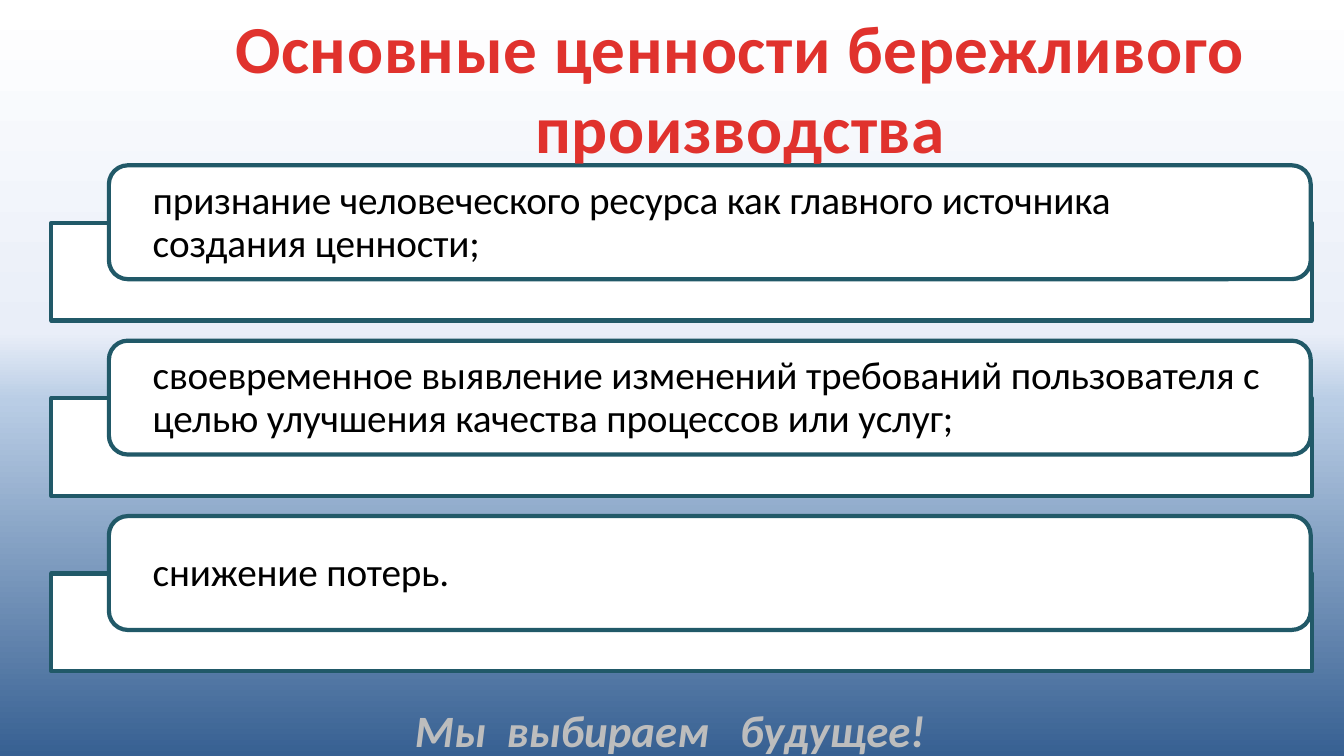
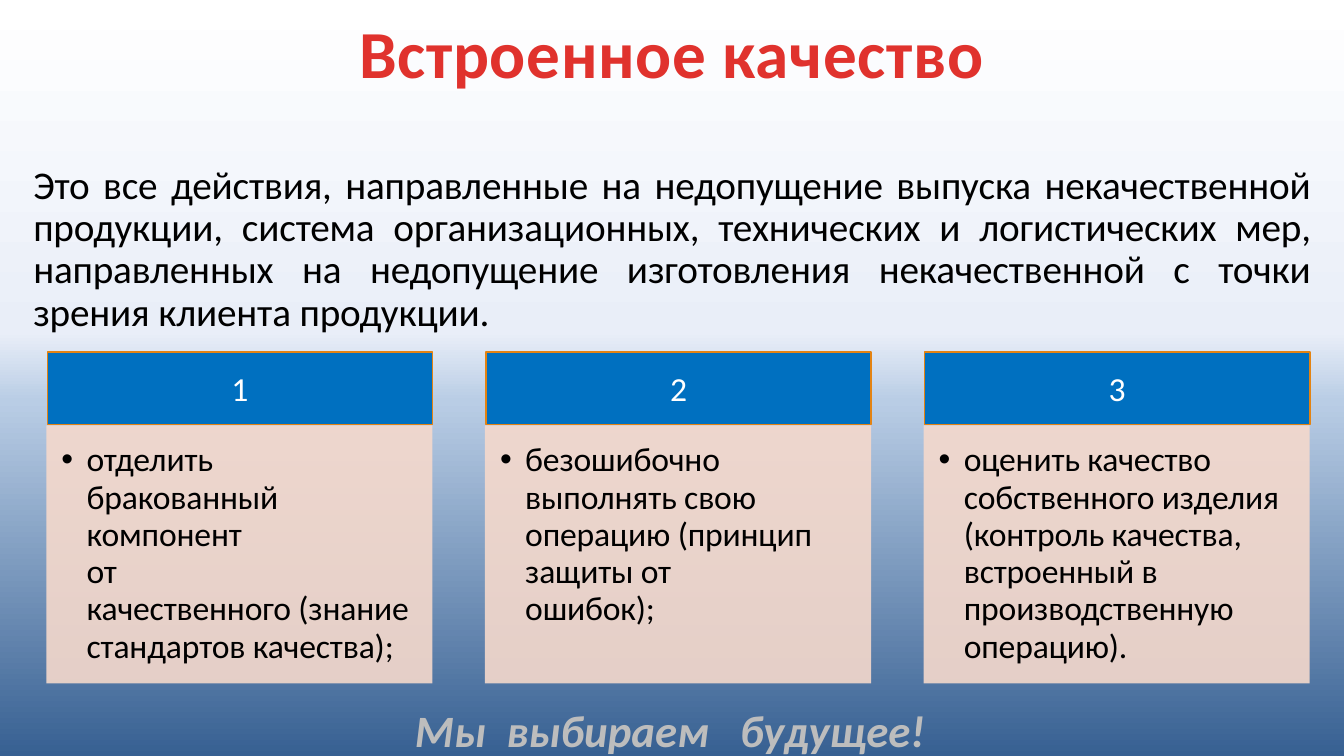
from lxml import etree
from pptx import Presentation
from pptx.dml.color import RGBColor
from pptx.enum.shapes import MSO_SHAPE
from pptx.enum.text import MSO_ANCHOR, PP_ALIGN
from pptx.oxml.ns import qn
from pptx.util import Inches, Pt

RECT, ROUNDED = MSO_SHAPE.RECTANGLE, MSO_SHAPE.ROUNDED_RECTANGLE
TOP, MIDDLE = MSO_ANCHOR.TOP, MSO_ANCHOR.MIDDLE
LEFT, CENTER, JUSTIFY = PP_ALIGN.LEFT, PP_ALIGN.CENTER, PP_ALIGN.JUSTIFY

# Shared look
FONT = "Calibri"
BLACK = RGBColor(0x00, 0x00, 0x00)
WHITE = RGBColor(0xFF, 0xFF, 0xFF)
TITLE_RED = RGBColor(0xE0, 0x32, 0x2D)
FOOTER_GREY = RGBColor(0xBD, 0xBD, 0xBD)
TEAL = RGBColor(0x21, 0x59, 0x68)
BLUE = RGBColor(0x00, 0x70, 0xC0)
ORANGE = RGBColor(0xE3, 0x83, 0x12)
PEACH = RGBColor(0xF5, 0xD9, 0xCC)
BACKGROUND_STOPS = [
    (0, WHITE),
    (44, RGBColor(0xE9, 0xEE, 0xF8)),
    (53, RGBColor(0xB9, 0xCD, 0xE5)),
    (100, RGBColor(0x37, 0x60, 0x92)),
]

# Words of the footer, each with the extra width in points of the gap after it
FOOTER_WORDS = [("Мы", 7.2), ("выбираем", 14.4), ("будущее!", 0)]

VALUES = [
    "признание человеческого ресурса как главного источника\vсоздания ценности;",
    "своевременное выявление изменений требований пользователя с\v"
    "целью улучшения качества процессов или услуг;",
    "снижение потерь.",
]
QUALITY = (
    "Это все действия, направленные на недопущение выпуска некачественной "
    "продукции, система организационных, технических и логистических мер, "
    "направленных на недопущение изготовления некачественной с точки "
    "зрения клиента продукции."
)
STEPS = [
    "отделить\vбракованный\vкомпонент\vот\vкачественного (знание\vстандартов качества);",
    "безошибочно\vвыполнять свою\vоперацию (принцип\vзащиты от\vошибок);",
    "оценить качество\vсобственного изделия\v(контроль качества,\vвстроенный в\v"
    "производственную\vоперацию).",
]


def set_background(master):
    """Vertical gradient behind every slide."""
    fill = master.background.fill
    fill.gradient()
    fill.gradient_angle = 270
    stops = master.element.find(".//" + qn("p:bg")).find(".//" + qn("a:gsLst"))
    for stop in list(stops):
        stops.remove(stop)
    for position, color in BACKGROUND_STOPS:
        stop = etree.SubElement(stops, qn("a:gs"), pos=str(position * 1000))
        etree.SubElement(stop, qn("a:srgbClr"), val=str(color))


def add_text(shape, text, size=28, color=BLACK, bold=False, italic=False,
             align=LEFT, anchor=TOP, insets=(0, 0, 0, 0), line_spacing=None,
             tracking=0, bullet_indent=0):
    """Fill a shape with one paragraph; text is a string or (text, tracking) runs."""
    frame = shape.text_frame
    frame.word_wrap = True
    frame.vertical_anchor = anchor
    (frame.margin_left, frame.margin_top,
     frame.margin_right, frame.margin_bottom) = map(Inches, insets)
    paragraph = frame.paragraphs[0]
    if bullet_indent:
        props = paragraph._p.get_or_add_pPr()
        props.set("marL", str(Inches(0.4)))
        props.set("indent", str(-Inches(bullet_indent)))
        etree.SubElement(props, qn("a:buFont"), typeface="Arial")
        etree.SubElement(props, qn("a:buChar"), char="•")
    paragraph.alignment = align
    if line_spacing:
        paragraph.line_spacing = line_spacing
    runs = [(text, tracking)] if isinstance(text, str) else text
    for words, spacing in runs:
        for index, line in enumerate(words.split("\v")):
            if index:
                paragraph.add_line_break()
            run = paragraph.add_run()
            run.text = line
            font = run.font
            font.name, font.size = FONT, Pt(size)
            font.bold, font.italic = bold, italic
            font.color.rgb = color
            run._r.get_or_add_rPr().set("spc", str(round(spacing * 100)))


def add_box(slide, kind, left, top, width, height, fill, line=None, weight=1, opacity=None):
    box = slide.shapes.add_shape(
        kind, Inches(left), Inches(top), Inches(width), Inches(height))
    box.shadow.inherit = False
    box.fill.solid()
    box.fill.fore_color.rgb = fill
    if opacity:
        color = box._element.spPr.find(qn("a:solidFill"))[0]
        etree.SubElement(color, qn("a:alpha"), val=str(opacity * 1000))
    if line is None:
        box.line.fill.background()
    else:
        box.line.color.rgb = line
        box.line.width = Pt(weight)
    return box


def add_label(slide, left, top, width, height, text, **style):
    label = slide.shapes.add_textbox(
        Inches(left), Inches(top), Inches(width), Inches(height))
    add_text(label, text, **style)


def add_title(slide, left, top, width, height, text):
    add_label(slide, left, top, width, height, text, size=48, color=TITLE_RED,
              bold=True, align=CENTER, insets=(0.1, 0.05, 0.1, 0.05), tracking=0.5)


def add_footer(slide):
    runs = []
    for word, gap in FOOTER_WORDS:
        runs.append((word, 0))
        if gap:
            runs.append((" ", gap))
    add_label(slide, 0, 7.07, 13.29, 0.44, runs, size=32, color=FOOTER_GREY,
              bold=True, italic=True, align=CENTER, line_spacing=Pt(31.4))


def add_value(slide, left, top, width, text):
    """A rounded card overlapping the bar below it."""
    add_box(slide, RECT, left, top + 0.57, width, 0.97, WHITE, TEAL, 3)
    card = add_box(slide, ROUNDED, left + 0.57, top, width - 0.58, 1.13, WHITE, TEAL, 3)
    add_text(card, text, anchor=MIDDLE, insets=(0.38, 0, 0.2, 0),
             line_spacing=Pt(30.7), tracking=-0.1)


def add_step(slide, left, top, width, number, text):
    """A numbered heading over a panel with one bullet."""
    panel = add_box(slide, RECT, left, top + 0.73, width, 2.56, PEACH, opacity=90)
    add_text(panel, text, size=24, insets=(0, 0.16, 0, 0), line_spacing=Pt(26.6),
             tracking=-0.1, bullet_indent=0.25)
    heading = add_box(slide, RECT, left + 0.01, top, width - 0.01, 0.72, BLUE, ORANGE, 1.2)
    add_text(heading, str(number), size=24, color=WHITE, align=CENTER, anchor=MIDDLE)


def build_values(slide):
    for index, text in enumerate(VALUES):
        add_value(slide, 0.51, 1.64 + index * 1.74, 12.5, text)
    add_footer(slide)
    add_title(slide, 1.33, 0.01, 12.03, 1.72, "Основные ценности бережливого производства")


def build_quality(slide):
    add_label(slide, 0.32, 1.52, 12.68, 1.75, QUALITY, align=JUSTIFY,
              insets=(0.01, 0.12, 0, 0), line_spacing=0.9, tracking=-0.1)
    for index, text in enumerate(STEPS):
        add_step(slide, 0.46 + index * 4.35, 3.49, 3.83, index + 1, text)
    add_footer(slide)
    add_title(slide, 0, 0.06, 13.33, 0.91, "Встроенное качество")


def main():
    deck = Presentation()
    deck.slide_width, deck.slide_height = Inches(13.33), Inches(7.5)
    set_background(deck.slide_master)
    for build in (build_values, build_quality):
        build(deck.slides.add_slide(deck.slide_layouts[6]))
    deck.save("out.pptx")


if __name__ == "__main__":
    main()
